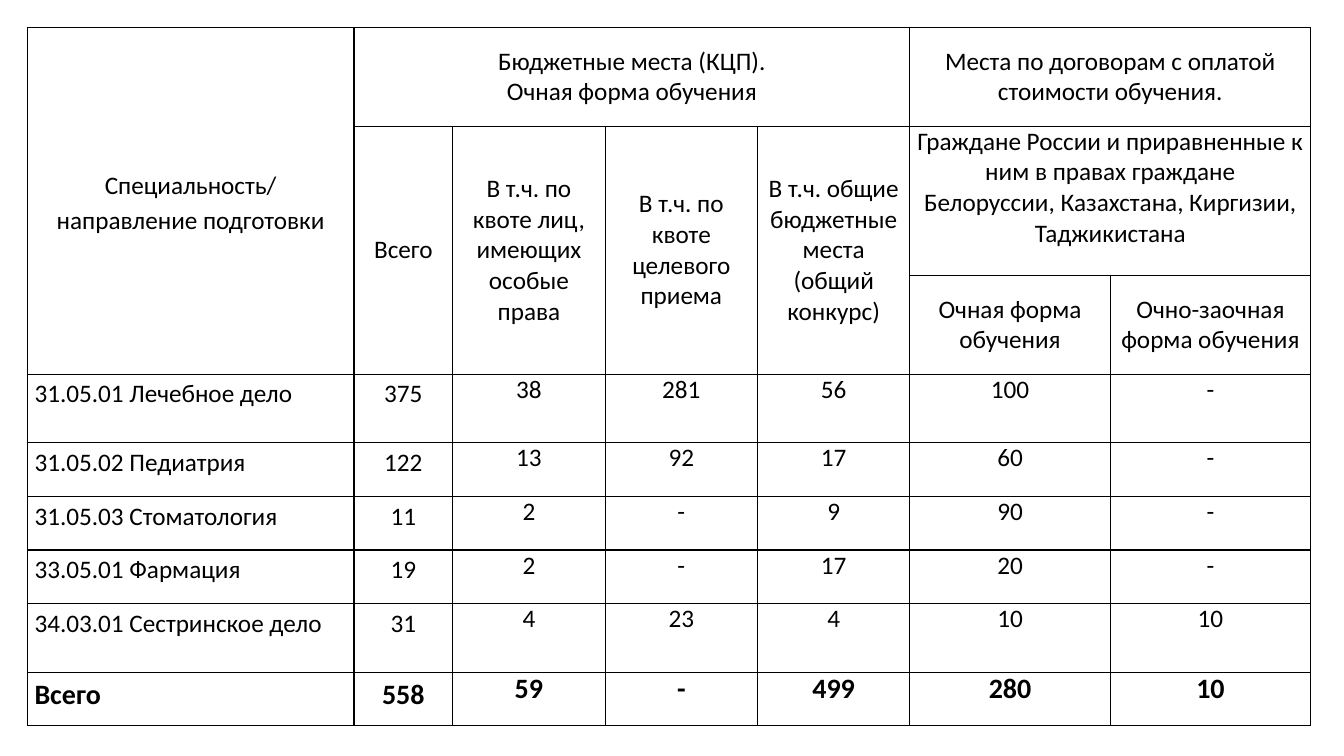
import pptx
import pptx.dml.color
import pptx.enum.text
import pptx.oxml
import pptx.oxml.ns
import pptx.util
from pptx.util import Cm

BLACK = "000000"
COLUMN_WIDTHS = [8.23, 2.49, 3.84, 3.84, 3.84, 5.05, 5.05]
ROW_HEIGHTS = [2.49, 3.76, 2.49, 1.73, 1.35, 1.35, 1.35, 1.73, 1.35]
MIDDLE = pptx.enum.text.MSO_ANCHOR.MIDDLE
TOP = pptx.enum.text.MSO_ANCHOR.TOP
CENTER = pptx.enum.text.PP_ALIGN.CENTER
LEFT = pptx.enum.text.PP_ALIGN.LEFT

HEADINGS = [
    (0, 0, 3, 1, "Специальность/\nнаправление подготовки", MIDDLE, 1.15),
    (0, 1, 1, 4, "Бюджетные места (КЦП).\vОчная форма обучения", MIDDLE, 1),
    (0, 5, 1, 2, "Места по договорам с оплатой стоимости обучения.", MIDDLE, 1),
    (1, 1, 2, 1, "Всего", MIDDLE, 1),
    (1, 2, 2, 1, "В т.ч. по квоте лиц, имеющих особые права", MIDDLE, 1),
    (1, 3, 2, 1, "В т.ч. по квоте целевого приема", MIDDLE, 1),
    (1, 4, 2, 1, "В т.ч. общие бюджетные места (общий конкурс)", MIDDLE, 1),
    (1, 5, 1, 2, "Граждане России и приравненные к ним в правах граждане "
                 "Белоруссии, Казахстана, Киргизии, Таджикистана", TOP, 1),
    (2, 5, 1, 1, "Очная форма обучения", MIDDLE, 1),
    (2, 6, 1, 1, "Очно-заочная форма обучения", MIDDLE, 1),
]

PLACES = [
    ("31.05.01 Лечебное дело", "375", "38", "281", "56", "100", "-"),
    ("31.05.02 Педиатрия", "122", "13", "92", "17", "60", "-"),
    ("31.05.03 Стоматология", "11", "2", "-", "9", "90", "-"),
    ("33.05.01 Фармация", "19", "2", "-", "17", "20", "-"),
    ("34.03.01 Сестринское дело", "31", "4", "23", "4", "10", "10"),
    ("Всего", "558", "59", "-", "499", "280", "10"),
]


def rgb(value):
    return pptx.dml.color.RGBColor.from_string(value)


def outline_cell(cell):
    properties = cell._tc.get_or_add_tcPr()
    for side in ("lnL", "lnR", "lnT", "lnB"):
        properties.append(pptx.oxml.parse_xml(
            f'<a:{side} {pptx.oxml.ns.nsdecls("a")} w="{pptx.util.Pt(1)}">'
            f'<a:solidFill><a:srgbClr val="{BLACK}"/></a:solidFill></a:{side}>'))
    cell.fill.background()
    cell.margin_left = cell.margin_right = Cm(0.18)
    cell.margin_top = cell.margin_bottom = 0


def write_cell(cell, text, align=CENTER, anchor=TOP, spacing=1, size=18, bold=False):
    cell.text_frame.text = text
    cell.vertical_anchor = anchor
    for paragraph in cell.text_frame.paragraphs:
        paragraph.alignment = align
        paragraph.line_spacing = float(spacing)
        for run in paragraph.runs:
            run.font.name = "Calibri"
            run.font.size = pptx.util.Pt(size)
            run.font.bold = bold
            run.font.color.rgb = rgb(BLACK)


def add_grid(slide):
    grid = slide.shapes.add_table(
        len(ROW_HEIGHTS), len(COLUMN_WIDTHS), Cm(0.69), Cm(0.69),
        Cm(sum(COLUMN_WIDTHS)), Cm(sum(ROW_HEIGHTS))).table
    grid.first_row = grid.horz_banding = False
    for column, width in zip(grid.columns, COLUMN_WIDTHS):
        column.width = Cm(width)
    for row, height in zip(grid.rows, ROW_HEIGHTS):
        row.height = Cm(height)
    for cell in grid.iter_cells():
        outline_cell(cell)
    return grid


def fill_headings(grid):
    for row, column, rows, columns, text, anchor, spacing in HEADINGS:
        heading = grid.cell(row, column)
        if rows * columns > 1:
            heading.merge(grid.cell(row + rows - 1, column + columns - 1))
        write_cell(heading, text, anchor=anchor, spacing=spacing)


def fill_places(grid):
    first_row = len(ROW_HEIGHTS) - len(PLACES)
    for row, places in enumerate(PLACES, first_row):
        is_total = places is PLACES[-1]
        for column, text in enumerate(places):
            write_cell(grid.cell(row, column), text,
                       align=CENTER if column else LEFT,
                       spacing=1.15 if column < 2 else 1,
                       size=20 if is_total else 18, bold=is_total)


def main():
    presentation = pptx.Presentation()
    presentation.slide_width = Cm(33.87)
    presentation.slide_height = Cm(19.05)
    slide = presentation.slides.add_slide(presentation.slide_layouts[6])
    grid = add_grid(slide)
    fill_headings(grid)
    fill_places(grid)
    presentation.save("out.pptx")


if __name__ == "__main__":
    main()
